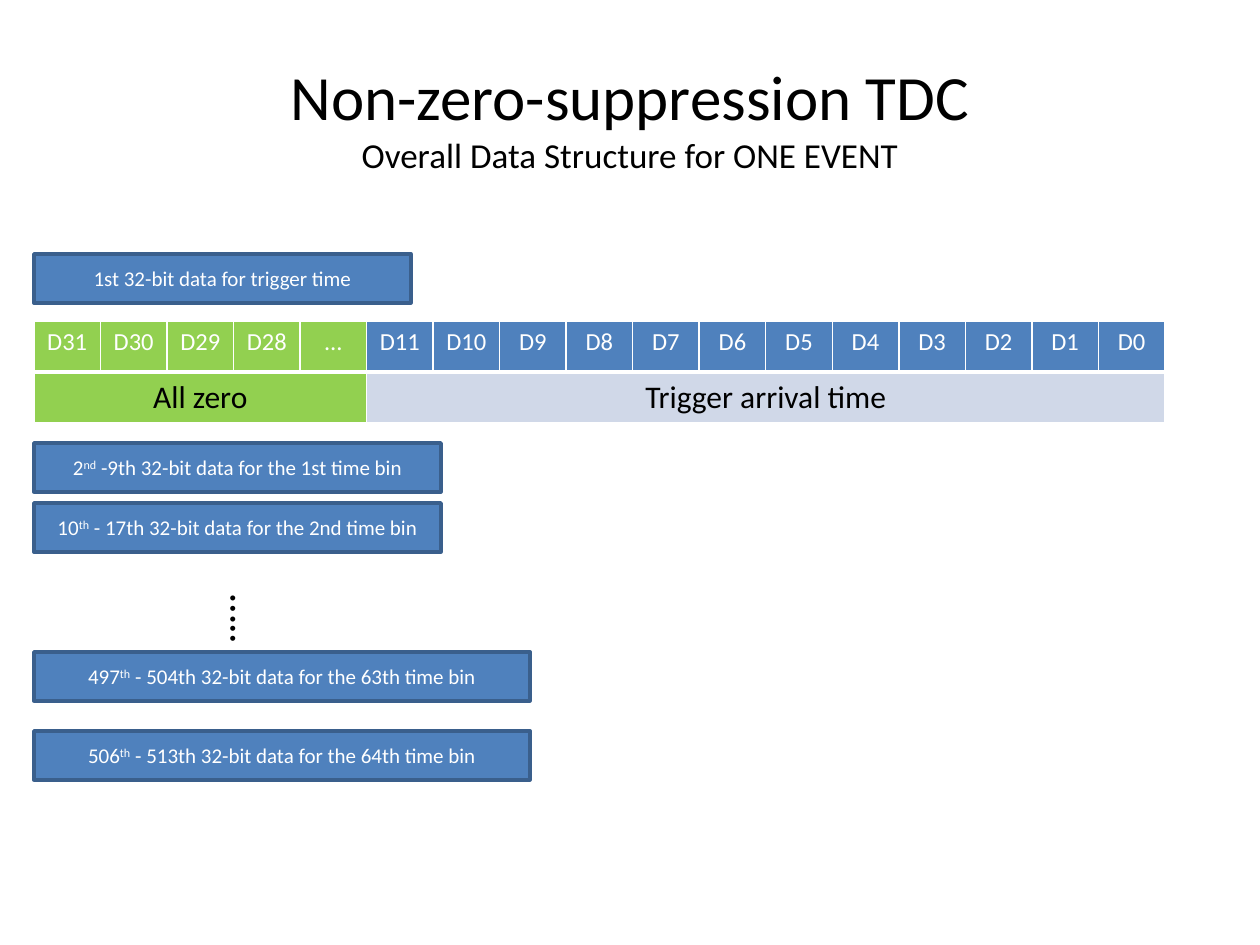
from lxml import etree
from pptx import Presentation
from pptx.dml.color import RGBColor
from pptx.enum import shapes, text
from pptx.oxml.ns import qn

BLUE = RGBColor(0x4F, 0x81, 0xBD)
EDGE = RGBColor(0x3A, 0x5F, 0x8C)
GREEN = RGBColor(0x92, 0xD0, 0x50)
PALE = RGBColor(0xD0, 0xD8, 0xE8)
WHITE = RGBColor(0xFF, 0xFF, 0xFF)
BLACK = RGBColor(0, 0, 0)
FONT = "Calibri"
PT = 12700

TITLE = [("Non-zero-suppression TDC", 36), ("Overall Data Structure for ONE EVENT", 20)]
LEFT, BAR_H = 34, 49
# top, width, number, superscript, rest
BARS = [
    (254, 377, "", "", "1st 32-bit data for trigger time"),
    (443, 407, "2", "nd", " -9th 32-bit data for the 1st time bin"),
    (503, 407, "10", "th", " - 17th 32-bit data for the 2nd time bin"),
    (652, 496, "497", "th", " - 504th 32-bit data for the 63th time bin"),
    (731, 496, "506", "th", " - 513th 32-bit data for the 64th time bin"),
]
BITS = ["D31", "D30", "D29", "D28", "…"] + [f"D{n}" for n in range(11, -1, -1)]
# label, first column, last column, fill
FIELDS = [("All zero", 0, 4, GREEN), ("Trigger arrival time", 5, 16, PALE)]


def px(n):
    return round(n * 914400 / 126)


def style(par, size, color, align=text.PP_ALIGN.CENTER):
    par.alignment = align
    font = par.font
    font.name, font.size, font.bold = FONT, size * PT, False
    font.color.rgb = color


def add_title(slide):
    box = slide.shapes.add_textbox(px(63), px(38), px(1134), px(157))
    frame = box.text_frame
    frame.word_wrap = True
    frame.vertical_anchor = text.MSO_ANCHOR.MIDDLE
    par = frame.paragraphs[0]
    style(par, TITLE[0][1], BLACK)
    for i, (line, size) in enumerate(TITLE):
        if i:
            par.add_line_break()
        run = par.add_run()
        run.text, run.font.size = line, size * PT


def add_bar(slide, top, width, num, sup, rest):
    bar = slide.shapes.add_shape(
        shapes.MSO_SHAPE.RECTANGLE, px(LEFT), px(top), px(width), px(BAR_H))
    bar.shadow.inherit = False
    bar.fill.solid()
    bar.fill.fore_color.rgb = BLUE
    bar.line.color.rgb, bar.line.width = EDGE, 2 * PT
    bar.text_frame.vertical_anchor = text.MSO_ANCHOR.MIDDLE
    par = bar.text_frame.paragraphs[0]
    style(par, 12, WHITE)
    for part in filter(None, (num, sup, rest)):
        run = par.add_run()
        run.text = part
        if part == sup:
            run.font._element.set("baseline", "30000")


def add_dots(slide):
    box = slide.shapes.add_textbox(px(203), px(582), px(76), px(63))
    frame = box.text_frame
    frame.word_wrap = False
    frame.auto_size = text.MSO_AUTO_SIZE.SHAPE_TO_FIT_TEXT
    frame._txBody.bodyPr.set("vert", "eaVert")
    par = frame.paragraphs[0]
    par.text = "….."
    style(par, 24, BLACK, text.PP_ALIGN.LEFT)


def set_edges(cell, base):
    """Draw white cell borders; base is the width of the bottom one."""
    props = cell._tc.get_or_add_tcPr()
    for side, width in (("L", 1), ("R", 1), ("T", 1), ("B", base)):
        line = etree.SubElement(props, qn(f"a:ln{side}"), w=str(width * PT))
        fill = etree.SubElement(line, qn("a:solidFill"))
        etree.SubElement(fill, qn("a:srgbClr"), val=str(WHITE))


def fill_cell(cell, label, size, ink, back):
    cell.text = label
    style(cell.text_frame.paragraphs[0], size, ink)
    cell.fill.solid()
    cell.fill.fore_color.rgb = back


def add_word(slide):
    count = len(BITS)
    table = slide.shapes.add_table(
        2, count, px(LEFT), px(321), px(1131), px(102)).table
    for col, bit in enumerate(BITS):
        table.columns[col].width = px(1131) // count
        for row, base in enumerate((3, 1)):
            set_edges(table.cell(row, col), base)
        fill_cell(table.cell(0, col), bit, 14, WHITE, GREEN if col < 5 else BLUE)
    for label, first, last, back in FIELDS:
        cell = table.cell(1, first)
        cell.merge(table.cell(1, last))
        fill_cell(cell, label, 18, BLACK, back)


def main():
    deck = Presentation()
    deck.slide_width, deck.slide_height = px(1260), px(945)
    slide = deck.slides.add_slide(deck.slide_layouts[6])
    add_title(slide)
    for bar in BARS:
        add_bar(slide, *bar)
    add_dots(slide)
    add_word(slide)
    deck.save("out.pptx")


if __name__ == "__main__":
    main()
